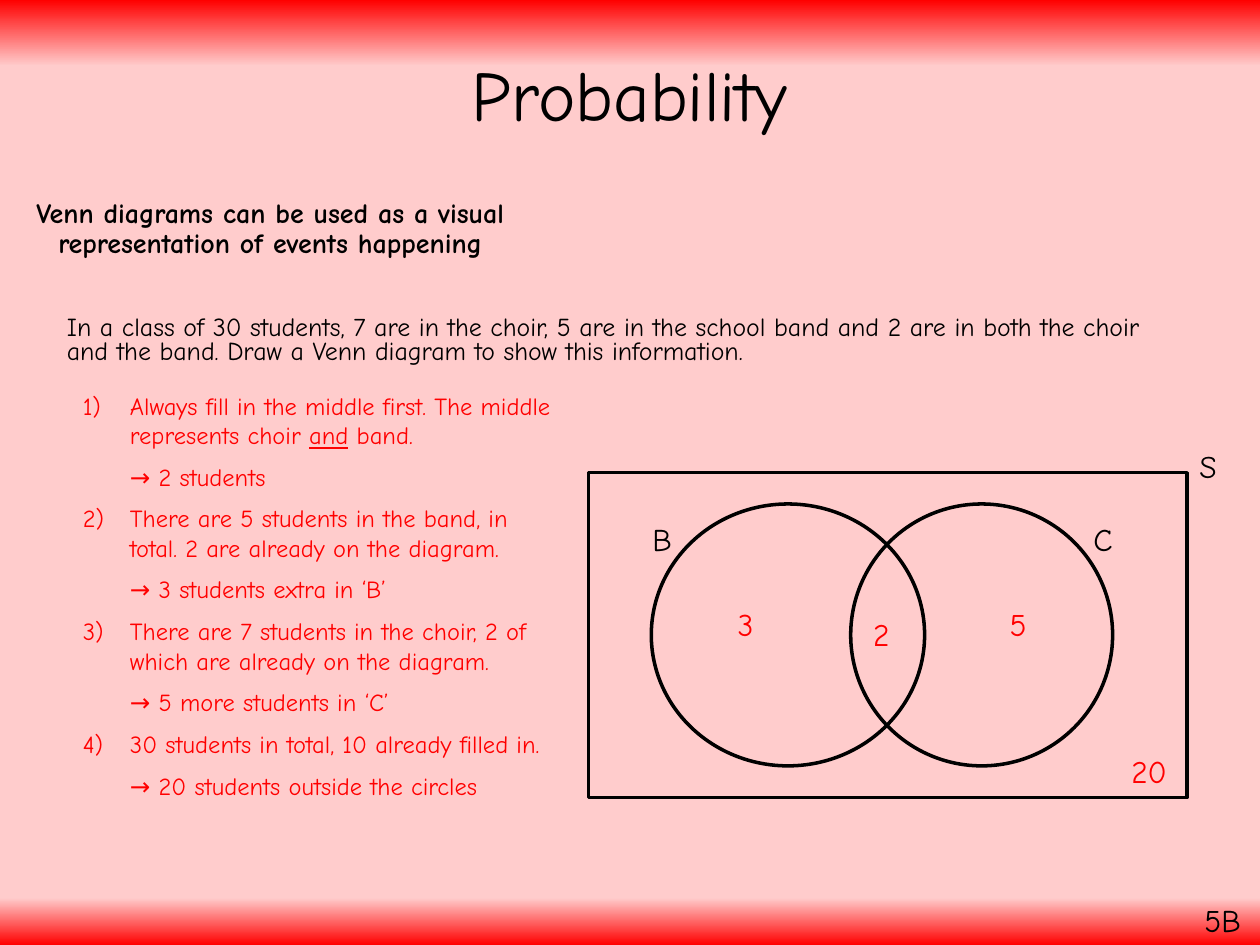
from lxml.etree import SubElement
from pptx import Presentation
from pptx.dml.color import RGBColor
from pptx.enum.shapes import MSO_SHAPE
from pptx.enum.text import MSO_ANCHOR, PP_ALIGN
from pptx.oxml.ns import qn
from pptx.util import Cm, Pt

COLORS = {"ink": "000000", "answer": "FF0000", "edge": "FF0000", "paper": "FFCCCC"}
FONT = "Comic Neue"
TITLE = {"size": Pt(40.5)}
HEADING = {"size": Pt(16), "bold": True}
QUESTION = {"size": Pt(14.8)}
STEP = {"size": Pt(14)}
LABEL = {"size": Pt(18)}
HANGING = Cm(0.95)

STEPS = [
    (["Always fill in the middle first. The middle represents choir ", "and", " band."],
     "→ 2 students"),
    (["There are 5 students in the band, in total. 2 are already on the diagram."],
     "→ 3 students extra in ‘B’"),
    (["There are 7 students in the choir, 2 of which are already on the diagram."],
     "→ 5 more students in ‘C’"),
    (["30 students in total, 10 already filled in."],
     "→ 20 students outside the circles"),
]
SET_LABELS = [("B", 12.9, 10.36), ("C", 21.79, 10.36), ("S", 23.93, 8.89)]
COUNTS = [("3", 14.61, 12.07, 0.84), ("2", 17.35, 12.27, 0.84),
          ("5", 19.89, 12.07, 1.27), ("20", 22.43, 15.04, 1.47)]


def paint_background(slide):
    """Fill the background with a vertical gradient that is darker at both ends."""
    fill = slide.background.fill
    fill.gradient()
    gradient = slide.background._cSld.find(".//" + qn("a:gradFill"))
    stops = gradient.find(qn("a:gsLst"))
    for stop in list(stops):
        stops.remove(stop)
    for percent, color in ((0, "edge"), (7, "paper"), (95, "paper"), (100, "edge")):
        stop = SubElement(stops, qn("a:gs"), pos=str(percent * 1000))
        SubElement(stop, qn("a:srgbClr"), val=COLORS[color])
    gradient.find(qn("a:lin")).set("ang", "5400000")


def add_frame(slide, box, wrap=True):
    """Add an empty text box and return its text frame."""
    frame = slide.shapes.add_textbox(*map(Cm, box)).text_frame
    frame.word_wrap = wrap
    return frame


def add_run(paragraph, text, look, color):
    """Append a run in the slide font."""
    run = paragraph.add_run()
    run.text = text
    run.font.name = FONT
    run.font.color.rgb = RGBColor.from_string(COLORS[color])
    for attribute, value in look.items():
        setattr(run.font, attribute, value)
    return run


def add_text(slide, text, box, look, color="ink", wrap=True, **layout):
    """Add a text box that holds one paragraph."""
    frame = add_frame(slide, box, wrap)
    paragraph = frame.paragraphs[0]
    for attribute, value in layout.items():
        setattr(paragraph, attribute, value)
    add_run(paragraph, text, look, color)
    return frame


def add_outline(slide, preset, box):
    """Add an unfilled shape with a black line."""
    outline = slide.shapes.add_shape(preset, *map(Cm, box))
    outline.shadow.inherit = False
    outline.fill.background()
    outline.line.color.rgb = RGBColor.from_string(COLORS["ink"])
    outline.line.width = Pt(2)


def indent(paragraph, margin, first=0):
    """Set the left margin and first-line indent, and return the properties."""
    properties = paragraph._p.get_or_add_pPr()
    properties.set("marL", str(margin))
    properties.set("indent", str(first))
    return properties


def add_steps(slide):
    """Add the numbered steps, each followed by its result."""
    frame = add_frame(slide, (1.42, 7.75, 9.96, 9.42))
    for number, (parts, result) in enumerate(STEPS, 1):
        step = frame.paragraphs[0] if number == 1 else frame.add_paragraph()
        outcome = frame.add_paragraph()
        step.space_before = outcome.space_before = Pt(7)
        SubElement(indent(step, HANGING, -HANGING), qn("a:buAutoNum"),
                   type="arabicParenR", startAt=str(number))
        for part in parts:
            add_run(step, part, STEP, "answer").font.underline = part == "and"
        indent(outcome, HANGING)
        add_run(outcome, result, STEP, "answer")


def add_venn(slide):
    """Draw the sample space, both sets, their labels and their counts."""
    add_outline(slide, MSO_SHAPE.RECTANGLE, (11.86, 9.53, 12.07, 6.55))
    for left, width in ((13.13, 5.51), (17.15, 5.28)):
        add_outline(slide, MSO_SHAPE.OVAL, (left, 10.16, width, 5.28))
    for name, left, top in SET_LABELS:
        add_text(slide, name, (left, top, 0.84, 1.02), LABEL)
    for count, left, top, width in COUNTS:
        add_text(slide, count, (left, top, width, 1.02), LABEL, "answer",
                 alignment=PP_ALIGN.CENTER)


def main():
    """Build the slide and save it."""
    deck = Presentation()
    deck.slide_width, deck.slide_height = Cm(25.4), Cm(19.05)
    slide = deck.slides.add_slide(deck.slide_layouts[6])
    paint_background(slide)
    title = add_text(slide, "Probability", (1.75, 0.61, 21.89, 2.77), TITLE,
                     alignment=PP_ALIGN.CENTER, line_spacing=0.9)
    title.vertical_anchor = MSO_ANCHOR.MIDDLE
    add_text(slide, "Venn diagrams can be used as a visual representation of events happening",
             (0.41, 3.89, 10.08, 13.26), HEADING,
             alignment=PP_ALIGN.CENTER, line_spacing=0.9)
    add_text(slide, "5B", (24.03, 18.03, 1.32, 1.02), LABEL, wrap=False)
    question = add_text(
        slide,
        "In a class of 30 students, 7 are in the choir, 5 are in the school band and 2 are "
        "in both the choir and the band. Draw a Venn diagram to show this information.",
        (0.46, 6.25, 23.5, 1.45), QUESTION, line_spacing=0.8)
    indent(question.paragraphs[0], Cm(0.64))
    add_venn(slide)
    add_steps(slide)
    deck.save("out.pptx")


if __name__ == "__main__":
    main()
